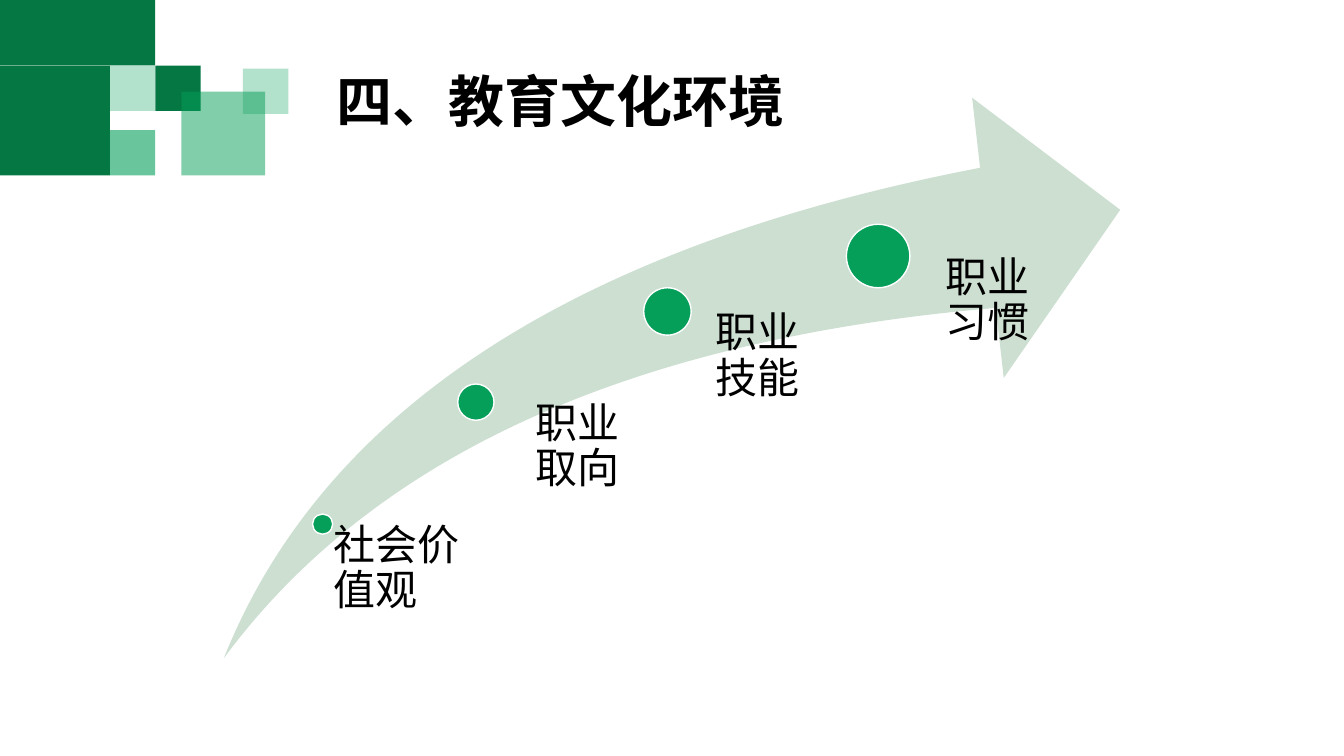
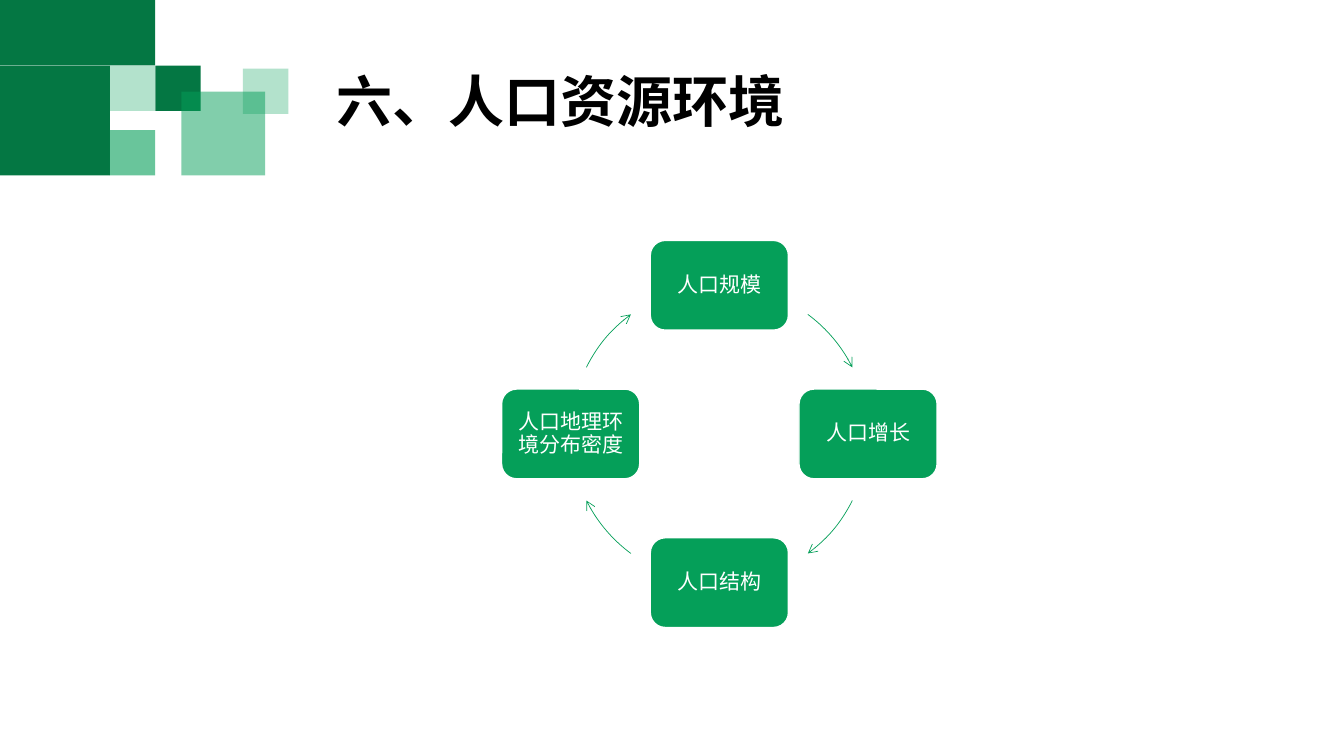
from math import cos, radians, sin

from pptx import Presentation
from pptx.dml.color import RGBColor
from pptx.enum import shapes, text
from pptx.oxml import ns, xmlchemy
from pptx.util import Inches, Pt

DARK = "047743"
GREEN = "059F59"
PALE = "CCDFD1"
WHITE = "FFFFFF"
BLACK = "000000"
FONT = "Calibri"
KIND = shapes.MSO_SHAPE


def colour(value):
    return RGBColor.from_string(value)


def add_box(page, kind, left, top, width, height, fill=None, line=None, weight=1, alpha=100):
    box = page.shapes.add_shape(kind, *map(Inches, (left, top, width, height)))
    box.shadow.inherit = False
    if fill:
        box.fill.solid()
        box.fill.fore_color.rgb = colour(fill)
    else:
        box.fill.background()
    if alpha < 100:
        tint = box.element.spPr.find(".//" + ns.qn("a:srgbClr"))
        xmlchemy.OxmlElement("a:alpha")
        tint.append(xmlchemy.OxmlElement("a:alpha"))
        tint[-1].set("val", str(alpha * 1000))
    if line:
        box.line.color.rgb = colour(line)
        box.line.width = Pt(weight)
    else:
        box.line.fill.background()
    return box


def write(box, words, size, ink, align, anchor, margins=None, bold=False):
    frame = box.text_frame
    frame.word_wrap = True
    frame.vertical_anchor = anchor
    if margins:
        (frame.margin_left, frame.margin_top,
         frame.margin_right, frame.margin_bottom) = map(Inches, margins)
    frame.text = words
    para = frame.paragraphs[0]
    para.alignment = align
    para.line_spacing = 0.9
    para.font.name = FONT
    para.font.size = Pt(size)
    para.font.bold = bold
    para.font.color.rgb = colour(ink)
    return para


def move_squares_to_layout(page, layout):
    small, large = 0.45, 0.83
    squares = [
        (0, 0.65, 1.09, 1.09, DARK, 100),
        (0, 0, 1.54, 0.65, DARK, 100),
        (1.09, 0.65, small, small, GREEN, 30),
        (1.54, 0.65, small, small, DARK, 100),
        (1.09, 1.29, small, small, GREEN, 60),
        (1.8, 0.91, large, large, GREEN, 50),
        (2.41, 0.68, small, small, GREEN, 30),
    ]
    for *place, fill, alpha in squares:
        square = add_box(page, KIND.RECTANGLE, *place, fill=fill, alpha=alpha)
        layout.shapes.element.append(square.element)


def add_page(deck, layout, heading):
    page = deck.slides.add_slide(layout)
    title = page.shapes.title
    title.left, title.top, title.width, title.height = map(Inches, (3.24, 0.69, 5.98, 0.71))
    para = write(title, heading, 40, BLACK, text.PP_ALIGN.LEFT, text.MSO_ANCHOR.TOP, bold=True)
    para.space_before = Pt(10)
    title.text_frame.auto_size = text.MSO_AUTO_SIZE.SHAPE_TO_FIT_TEXT
    return page


def add_swoosh(page, left, top, width, height, steps):
    swoosh = add_box(page, KIND.SWOOSH_ARROW, left, top, width, height, PALE)
    swoosh.adjustments[0] = swoosh.adjustments[1] = 0.25
    for words, x, y, size, label_x, label_width, inset in steps:
        add_box(page, KIND.OVAL, left + x - size / 2, top + y - size / 2, size, size,
                GREEN, WHITE)
        label = page.shapes.add_textbox(*map(Inches, (
            left + label_x, top + y, label_width, height - y)))
        write(label, words, 30, BLACK, text.PP_ALIGN.LEFT, text.MSO_ANCHOR.TOP,
              (inset, 0, 0, 0))


def add_cycle(page, left, top, size, names):
    radius = size / 2
    card_width, card_height = 1.37, 0.89
    for index, name in enumerate(names):
        turn = index * 90 - 90
        x = left + radius + radius * cos(radians(turn))
        y = top + radius + radius * sin(radians(turn))
        card = add_box(page, KIND.ROUNDED_RECTANGLE, x - card_width / 2, y - card_height / 2,
                       card_width, card_height, GREEN, WHITE)
        write(card, name, 15, WHITE, text.PP_ALIGN.CENTER, text.MSO_ANCHOR.MIDDLE, (0.1,) * 4)

        upright = index % 2 == 0
        start, end = (36.5, 63.4) if upright else (26.6, 53.5)
        arc = add_box(page, KIND.ARC, left, top, size, size, line=GREEN, weight=0.5)
        for place, angle in enumerate((turn + start, turn + end)):
            arc.adjustments[place] = angle % 360 * 0.6
        head = xmlchemy.OxmlElement("a:tailEnd")
        head.set("type", "arrow")
        arc.element.spPr.find(ns.qn("a:ln")).append(head)


def main():
    deck = Presentation()
    deck.slide_width, deck.slide_height = Inches(13.33), Inches(7.5)
    layout = deck.slide_layouts.get_by_name("Title Only")

    culture = add_page(deck, layout, "四、教育文化环境")
    move_squares_to_layout(culture, layout)
    add_swoosh(culture, 2.22, 0.97, 8.89, 5.56, [
        ("社会价值观", 0.98, 4.23, 0.2, 0.98, 1.52, 0.11),
        ("职业取向", 2.5, 3.02, 0.36, 2.9, 1.07, 0.19),
        ("职业技能", 4.4, 2.12, 0.47, 4.63, 1.41, 0.25),
        ("职业习惯", 6.49, 1.57, 0.63, 6.83, 1.2, 0.33),
    ])

    population = add_page(deck, layout, "六、人口资源环境")
    add_cycle(population, 5.66, 2.83, 2.95,
              ["人口规模", "人口增长", "人口结构", "人口地理环境分布密度"])

    deck.save("out.pptx")


if __name__ == "__main__":
    main()
